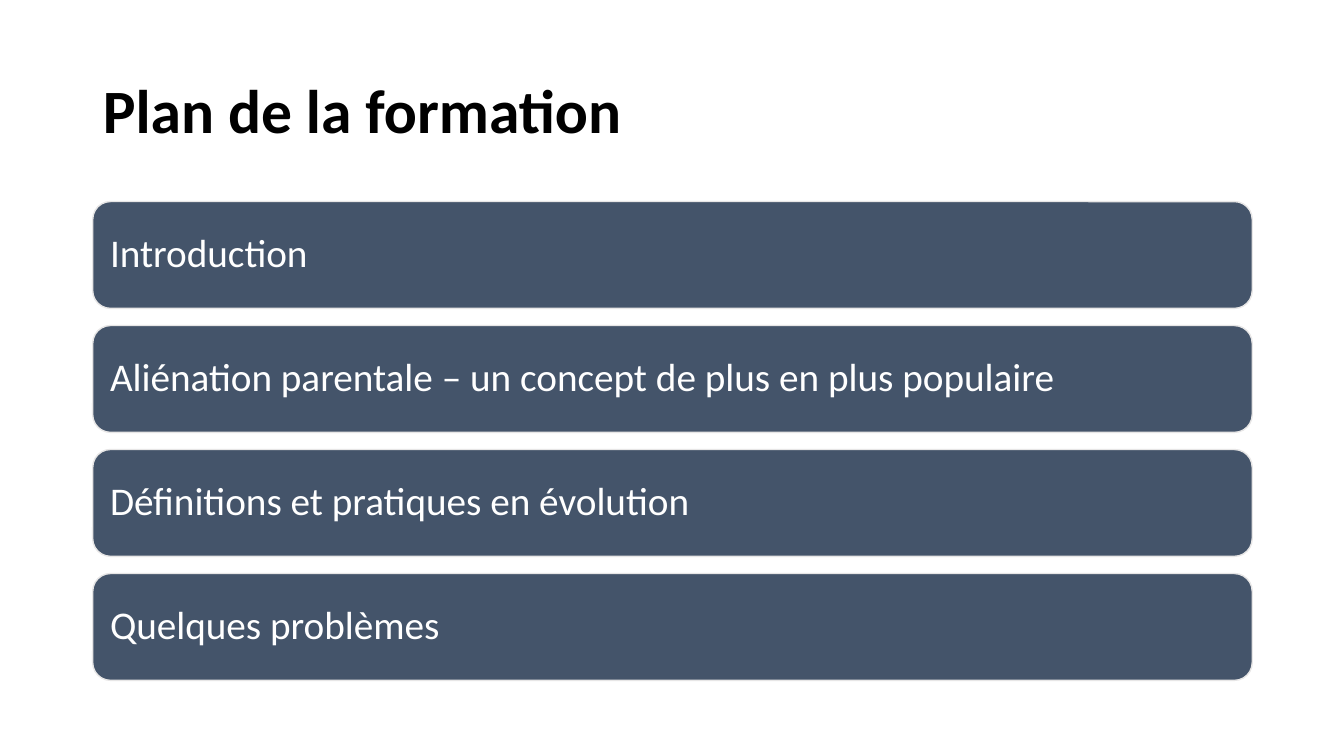
from pptx import Presentation
from pptx.dml.color import RGBColor
from pptx.enum.shapes import MSO_SHAPE as Shape
from pptx.enum.text import MSO_ANCHOR as Anchor, PP_ALIGN as Align
from pptx.util import Inches, Pt

WIDE, HIGH = 13.33, 7.5
LEFT, SPAN = 0.92, 11.5
TOPICS = [
    "Introduction",
    "Aliénation parentale – un concept de plus en plus populaire",
    "Définitions et pratiques en évolution",
    "Quelques problèmes",
]


def color(code):
    return RGBColor.from_string(code)


def write(frame, text, size, ink, bold=False, inset=0.1):
    frame.word_wrap = True
    frame.vertical_anchor = Anchor.MIDDLE
    frame.margin_left = frame.margin_right = Inches(inset)
    frame.margin_top = frame.margin_bottom = Inches(inset)
    para = frame.paragraphs[0]
    para.alignment = Align.LEFT
    para.line_spacing = 0.9
    run = para.add_run()
    run.text = text
    font = run.font
    font.name, font.size, font.bold = "Calibri", Pt(size), bold
    font.color.rgb = color(ink)


def head(slide, text, left, top, width, height):
    title = slide.shapes.title
    title.left, title.top = Inches(left), Inches(top)
    title.width, title.height = Inches(width), Inches(height)
    write(title.text_frame, text, size=44, ink="000000", bold=True)


def agenda(slide, topics, left, top, width, height, gap=0.17):
    tall = (height - gap * (len(topics) - 1)) / len(topics)
    for row, topic in enumerate(topics):
        bar = slide.shapes.add_shape(
            Shape.ROUNDED_RECTANGLE,
            Inches(left), Inches(top + row * (tall + gap)),
            Inches(width), Inches(tall),
        )
        bar.shadow.inherit = False
        bar.fill.solid()
        bar.fill.fore_color.rgb = color("44546A")
        bar.line.color.rgb = color("E7E6E6")
        bar.line.width = Pt(1)
        write(bar.text_frame, topic, size=28, ink="FFFFFF", inset=0.12)


def main():
    deck = Presentation()
    deck.slide_width, deck.slide_height = Inches(WIDE), Inches(HIGH)
    slide = deck.slides.add_slide(deck.slide_layouts[5])
    head(slide, "Plan de la formation", LEFT, 0.4, SPAN, 1.45)
    agenda(slide, TOPICS, LEFT, 2, SPAN, 4.75)
    deck.save("out.pptx")


if __name__ == "__main__":
    main()
